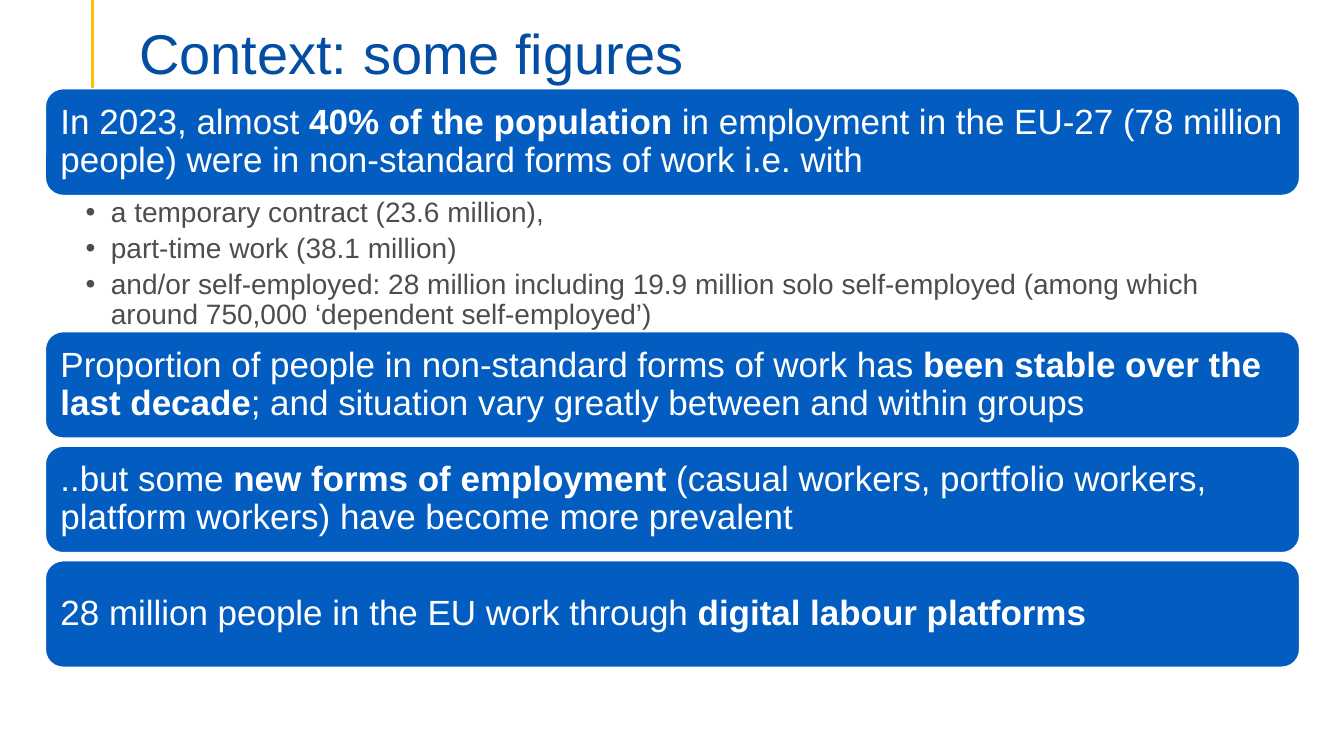
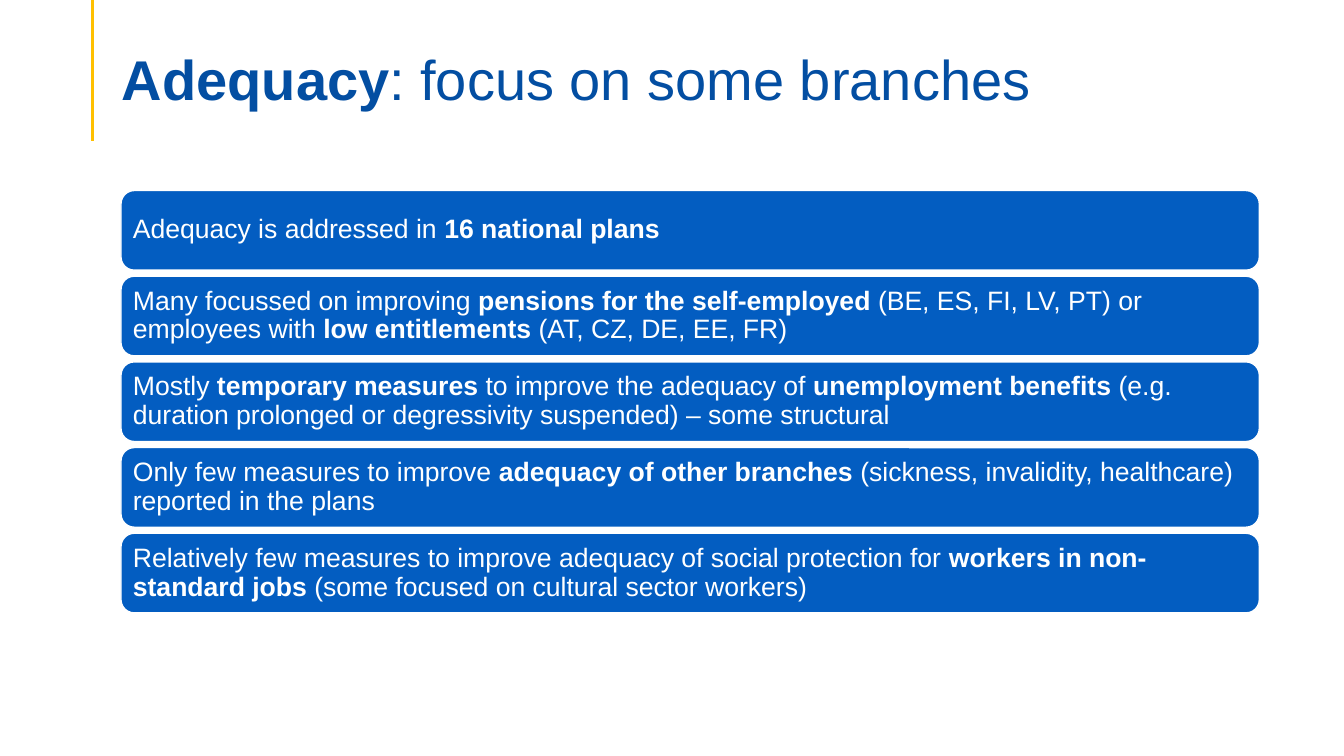
"""Build two slides on non-standard work and the adequacy of cover."""
from dataclasses import dataclass

import lxml.etree
import pptx
import pptx.dml.color
import pptx.enum.shapes
import pptx.enum.text
import pptx.oxml.ns
import pptx.util

Inches = pptx.util.Inches
Pt = pptx.util.Pt
RGB = pptx.dml.color.RGBColor.from_string
ANCHOR = pptx.enum.text.MSO_ANCHOR
LEFT = pptx.enum.text.PP_ALIGN.LEFT


@dataclass(frozen=True)
class Theme:
    """Colours, font and type sizes of the deck."""
    blue: str = "035DC1"
    navy: str = "034EA2"
    gold: str = "FFC000"
    white: str = "FFFFFF"
    gray: str = "4D4D4D"
    font: str = "Arial"
    head: int = 40
    large: int = 25
    list: int = 20
    small: int = 19


THEME = Theme()


def apply(thing, form):
    """Set each attribute named in the form on the thing."""
    for name, value in form.items():
        setattr(thing, name, value)


def place(shape, box):
    """Move a shape to a box of left, top, width and height in inches."""
    names = ("left", "top", "width", "height")
    apply(shape, dict(zip(names, map(Inches, box))))


def write(frame, lines, size, color, pads, anchor, after=0, hang=0):
    """Fill a frame with lines whose bold parts stand between double stars."""
    sides = ("margin_left", "margin_top", "margin_right", "margin_bottom")
    apply(frame, dict(zip(sides, map(Inches, pads))))
    apply(frame, {"word_wrap": True, "vertical_anchor": anchor,
                  "auto_size": pptx.enum.text.MSO_AUTO_SIZE.NONE})
    for row, line in enumerate(lines):
        para = frame.add_paragraph() if row else frame.paragraphs[0]
        if hang:
            props = para._p.get_or_add_pPr()
            props.set("marL", str(Inches(hang)))
            props.set("indent", str(-Inches(hang)))
        apply(para, {"alignment": LEFT, "line_spacing": 0.9,
                     "space_before": Pt(0), "space_after": Pt(after)})
        for part, text in enumerate(line.split("**")):
            if text:
                run = para.add_run()
                run.text = text
                apply(run.font, {"name": THEME.font, "size": Pt(size),
                                 "bold": part % 2 == 1})
                run.font.color.rgb = RGB(color)


def rule(deck, slide):
    """Draw the gold title rule and move it to the slide master."""
    line = slide.shapes.add_connector(
        pptx.enum.shapes.MSO_CONNECTOR.STRAIGHT,
        Inches(0.92), Inches(0), Inches(0.92), Inches(1.4))
    line.line.width = Pt(2.25)
    line.line.color.rgb = RGB(THEME.gold)
    lxml.etree.SubElement(line.element.spPr,
                          pptx.oxml.ns.qn("a:effectLst"))
    line.element.xpath(".//p:cNvPr")[0].set("id", "20")
    deck.slide_master.shapes.element.append(line.element)


def title(slide, box, text):
    """Place and fill the slide title."""
    shape = slide.shapes.title
    place(shape, box)
    write(shape.text_frame, [text], THEME.head, THEME.navy,
          (0.1, 0.05, 0.1, 0), ANCHOR.BOTTOM)


def points(slide, box, lines):
    """Place and fill the bulleted body."""
    shape = slide.placeholders[1]
    place(shape, box)
    write(shape.text_frame, lines, THEME.list, THEME.gray,
          (0.4, 0.03, 0.19, 0.03), ANCHOR.TOP, after=4, hang=0.25)


def stack(slide, box, gap, size, pad, lines):
    """Share a box among equal rounded bars, one for each line."""
    left, top, width, height = box
    tall = (height - gap * (len(lines) - 1)) / len(lines)
    for row, line in enumerate(lines):
        spot = (left, top + row * (tall + gap), width, tall)
        bar = slide.shapes.add_shape(
            pptx.enum.shapes.MSO_SHAPE.ROUNDED_RECTANGLE,
            *map(Inches, spot))
        bar.shadow.inherit = False
        bar.fill.solid()
        bar.fill.fore_color.rgb = RGB(THEME.blue)
        bar.line.color.rgb = RGB(THEME.white)
        bar.line.width = Pt(1)
        write(bar.text_frame, [line], size, THEME.white, (pad,) * 4,
              ANCHOR.MIDDLE)


def context(slide):
    """Build the slide of key figures."""
    title(slide, (1.28, 0, 11.5, 0.86), "Context: some figures")
    stack(slide, (0.45, 0.88, 12.44, 1.06), 0, THEME.large, 0.1, [
        "In 2023, almost **40% of the population **in employment in the "
        "EU‑27 (78 million people) were in non-standard forms of work "
        "i.e. with"])
    points(slide, (0.45, 1.94, 12.44, 1.36), [
        "a temporary contract (23.6 million),",
        "part-time work (38.1 million)",
        "and/or self-employed: 28 million including 19.9 million solo "
        "self-employed (among which around 750,000 ‘dependent "
        "self-employed’)"])
    stack(slide, (0.45, 3.29, 12.44, 3.33), 0.08, THEME.large, 0.1, [
        "Proportion of people in non-standard forms of work has **been "
        "stable over the last decade**; and situation vary greatly between "
        "and within groups",
        "..but some **new forms of employment **(casual workers, portfolio "
        "workers, platform workers) have become more prevalent",
        "28 million people in the EU work through **digital labour "
        "platforms**"])


def focus(slide):
    """Build the slide on adequacy by branch."""
    title(slide, (1.11, 0.26, 11.39, 0.86),
          "**Adequacy**: focus on some branches")
    stack(slide, (1.2, 1.89, 11.29, 4.19), 0.06, THEME.small, 0.08, [
        "Adequacy is addressed in **16 national plans**",
        "Many focussed on improving **pensions for the self-employed** "
        "(BE, ES, FI, LV, PT) or employees with **low entitlements **"
        "(AT, CZ, DE, EE, FR)",
        "Mostly **temporary measures **to improve the adequacy of "
        "**unemployment benefits** (e.g. duration prolonged or degressivity "
        "suspended) – some structural",
        "Only few measures to improve **adequacy of other branches **"
        "(sickness, invalidity, healthcare) reported in the plans",
        "Relatively few measures to improve adequacy of social protection "
        "for **workers in non-standard jobs** (some focused on cultural "
        "sector workers)"])


def main():
    """Build the deck and save it."""
    deck = pptx.Presentation()
    apply(deck, {"slide_width": Inches(13.33), "slide_height": Inches(7.5)})
    first = deck.slides.add_slide(deck.slide_layouts[1])
    rule(deck, first)
    context(first)
    focus(deck.slides.add_slide(deck.slide_layouts[5]))
    deck.save("out.pptx")


if __name__ == "__main__":
    main()
